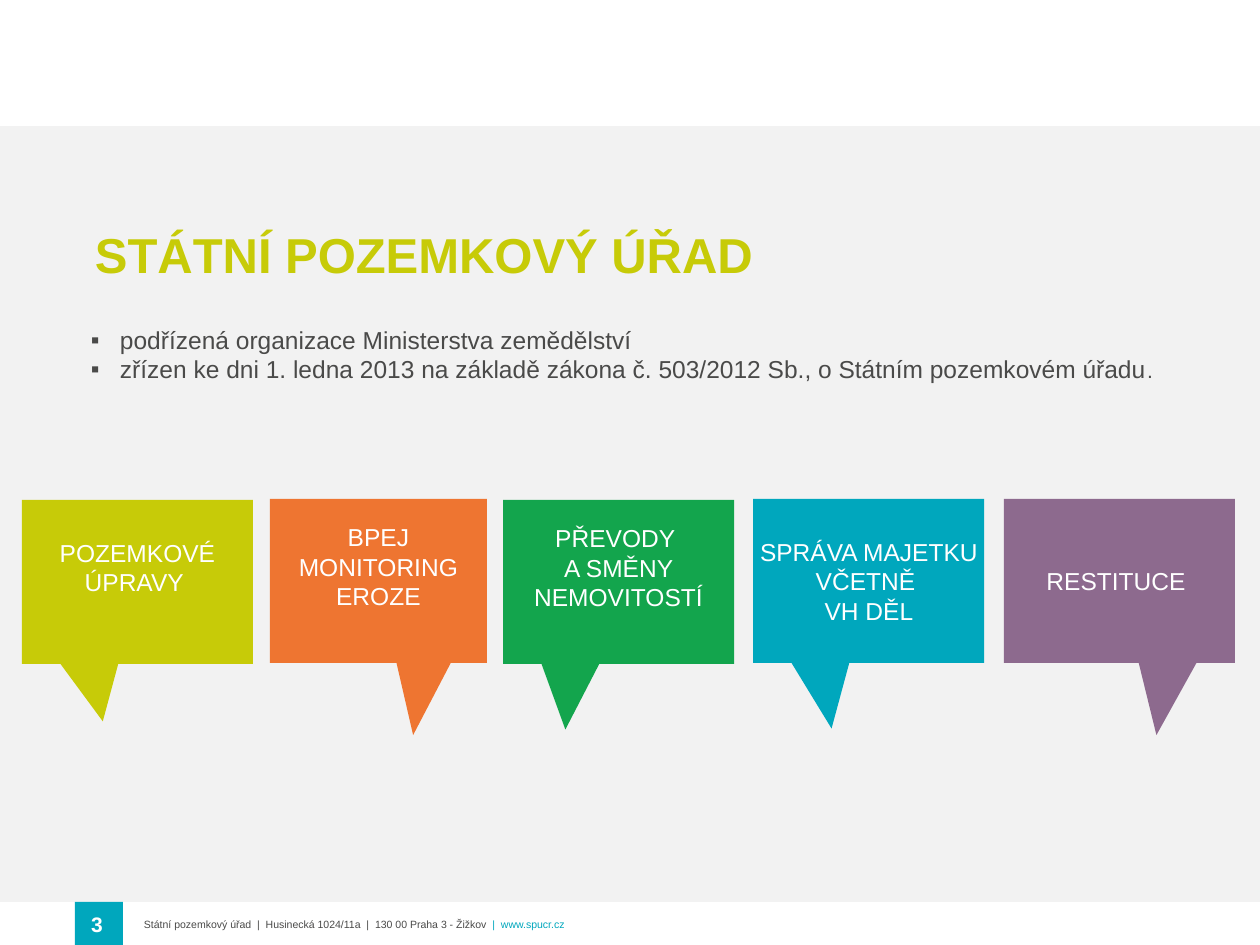
"""Build the slide on the State Land Office and its five areas of work."""
from dataclasses import dataclass

from lxml import etree
from pptx import Presentation
from pptx.dml.color import RGBColor
from pptx.enum.shapes import MSO_SHAPE
from pptx.enum.text import MSO_ANCHOR, PP_ALIGN
from pptx.oxml.ns import qn
from pptx.shapes.autoshape import Shape
from pptx.slide import Slide
from pptx.util import Emu, Pt

EMU_PER_PX = 914400 / 126
FONT = "Arial"
WHITE = RGBColor(0xFF, 0xFF, 0xFF)
LIGHT_GRAY = RGBColor(0xF2, 0xF2, 0xF2)
DARK_GRAY = RGBColor(0x4A, 0x4A, 0x49)
LIME = RGBColor(0xC7, 0xCB, 0x08)
ORANGE = RGBColor(0xEE, 0x75, 0x31)
GREEN = RGBColor(0x13, 0xA5, 0x4D)
TEAL = RGBColor(0x00, 0xA7, 0xBD)
PURPLE = RGBColor(0x8D, 0x6A, 0x8E)

CALLOUT_HEIGHT = 164
BLANK_LINE = 29
BULLET_INDENT = 29


@dataclass(frozen=True)
class Box:
    left: int
    top: int
    width: int
    height: int


@dataclass(frozen=True)
class Insets:
    left: int = 13
    top: int = 6
    right: int = 13
    bottom: int = 6


@dataclass(frozen=True)
class TextStyle:
    size: int
    color: RGBColor
    bold: bool = False
    align: PP_ALIGN = PP_ALIGN.LEFT
    anchor: MSO_ANCHOR = MSO_ANCHOR.TOP


@dataclass(frozen=True)
class Callout:
    left: int
    top: int
    width: int
    color: RGBColor
    tip: tuple[float, float]
    text: str = ""
    lift: int = 0


LABEL = TextStyle(14, WHITE, align=PP_ALIGN.CENTER, anchor=MSO_ANCHOR.MIDDLE)

CALLOUTS = (
    Callout(22, 500, 231, LIME, (-0.15, 0.85), "POZEMKOVÉ ÚPRAVY ", BLANK_LINE),
    Callout(270, 499, 217, ORANGE, (0.16, 0.94), "BPEJ\nMONITORING EROZE", BLANK_LINE),
    Callout(503, 500, 231, GREEN, (-0.23, 0.9), "PŘEVODY \nA SMĚNY NEMOVITOSTÍ", BLANK_LINE),
    Callout(753, 499, 231, TEAL, (-0.16, 0.9)),
    Callout(1004, 499, 231, PURPLE, (0.16, 0.94), "RESTITUCE "),
)


def px(length: int) -> Emu:
    """Convert pixels to EMU."""
    return Emu(round(length * EMU_PER_PX))


def bounds(box: Box) -> tuple[Emu, Emu, Emu, Emu]:
    """Return the box in EMU."""
    return px(box.left), px(box.top), px(box.width), px(box.height)


def write(shape: Shape, text: str, style: TextStyle, insets: Insets = Insets()) -> None:
    """Fill a shape with evenly styled text."""
    frame = shape.text_frame
    frame.word_wrap = True
    frame.vertical_anchor = style.anchor
    frame.margin_left, frame.margin_top = px(insets.left), px(insets.top)
    frame.margin_right, frame.margin_bottom = px(insets.right), px(insets.bottom)
    frame.text = text
    for paragraph in frame.paragraphs:
        paragraph.alignment = style.align
        for run in paragraph.runs:
            run.font.name = FONT
            run.font.size = Pt(style.size)
            run.font.bold = style.bold
            run.font.color.rgb = style.color


def add_block(slide: Slide, kind: MSO_SHAPE, box: Box, color: RGBColor) -> Shape:
    """Draw a flat filled shape without outline."""
    block = slide.shapes.add_shape(kind, *bounds(box))
    block.shadow.inherit = False
    block.fill.solid()
    block.fill.fore_color.rgb = color
    block.line.fill.background()
    return block


def add_text(slide: Slide, box: Box, text: str, style: TextStyle, insets: Insets = Insets()) -> Shape:
    """Draw a text box."""
    textbox = slide.shapes.add_textbox(*bounds(box))
    write(textbox, text, style, insets)
    return textbox


def add_callout(slide: Slide, callout: Callout) -> None:
    """Draw one speech bubble with its label."""
    box = Box(callout.left, callout.top, callout.width, CALLOUT_HEIGHT)
    bubble = add_block(slide, MSO_SHAPE.RECTANGULAR_CALLOUT, box, callout.color)
    bubble.adjustments[0], bubble.adjustments[1] = callout.tip
    if callout.text:
        write(bubble, callout.text, LABEL, Insets(bottom=6 + callout.lift))


def add_bullets(textbox: Shape) -> None:
    """Give every paragraph a square bullet with a hanging indent."""
    for paragraph in textbox.text_frame.paragraphs:
        properties = paragraph._p.get_or_add_pPr()
        properties.set("marL", str(px(BULLET_INDENT)))
        properties.set("indent", str(-px(BULLET_INDENT)))
        etree.SubElement(properties, qn("a:buFont")).set("typeface", FONT)
        etree.SubElement(properties, qn("a:buChar")).set("char", "▪")


def append_run(textbox: Shape, text: str, size: int, color: RGBColor) -> None:
    """Add a differently styled run to the last paragraph."""
    run = textbox.text_frame.paragraphs[-1].add_run()
    run.text = text
    run.font.name = FONT
    run.font.size = Pt(size)
    run.font.color.rgb = color


def main() -> None:
    """Build and save the slide."""
    presentation = Presentation()
    presentation.slide_width, presentation.slide_height = px(1260), px(945)
    slide = presentation.slides.add_slide(presentation.slide_layouts[6])

    address = add_text(
        slide, Box(131, 902, 615, 43),
        "Státní pozemkový úřad  |  Husinecká 1024/11a  |  130 00 Praha 3 - Žižkov  ",
        TextStyle(6, DARK_GRAY, anchor=MSO_ANCHOR.MIDDLE), Insets(top=8),
    )
    append_run(address, "|  www.spucr.cz", 6, TEAL)
    add_block(slide, MSO_SHAPE.RECTANGLE, Box(0, 126, 1260, 776), LIGHT_GRAY)
    add_block(slide, MSO_SHAPE.RECTANGLE, Box(75, 902, 48, 43), TEAL)
    add_text(
        slide, Box(74, 902, 46, 44), "3",
        TextStyle(12, WHITE, True, PP_ALIGN.CENTER, MSO_ANCHOR.MIDDLE), Insets(0, 0, 0, 0),
    )

    for callout in CALLOUTS:
        add_callout(slide, callout)
    add_text(slide, Box(745, 530, 248, 102), "SPRÁVA MAJETKU VČETNĚ \nVH DĚL", LABEL)

    add_text(
        slide, Box(82, 214, 1022, 91), "STÁTNÍ POZEMKOVÝ ÚŘAD",
        TextStyle(28, LIME, True), Insets(top=11),
    )
    facts = add_text(
        slide, Box(82, 320, 1097, 68),
        "podřízená organizace Ministerstva zemědělství\n"
        "zřízen ke dni 1. ledna 2013 na základě zákona č. 503/2012 Sb., o Státním pozemkovém úřadu",
        TextStyle(14, DARK_GRAY), Insets(9, 5, 9, 5),
    )
    add_bullets(facts)
    append_run(facts, ".", 12, DARK_GRAY)

    presentation.save("out.pptx")


if __name__ == "__main__":
    main()
